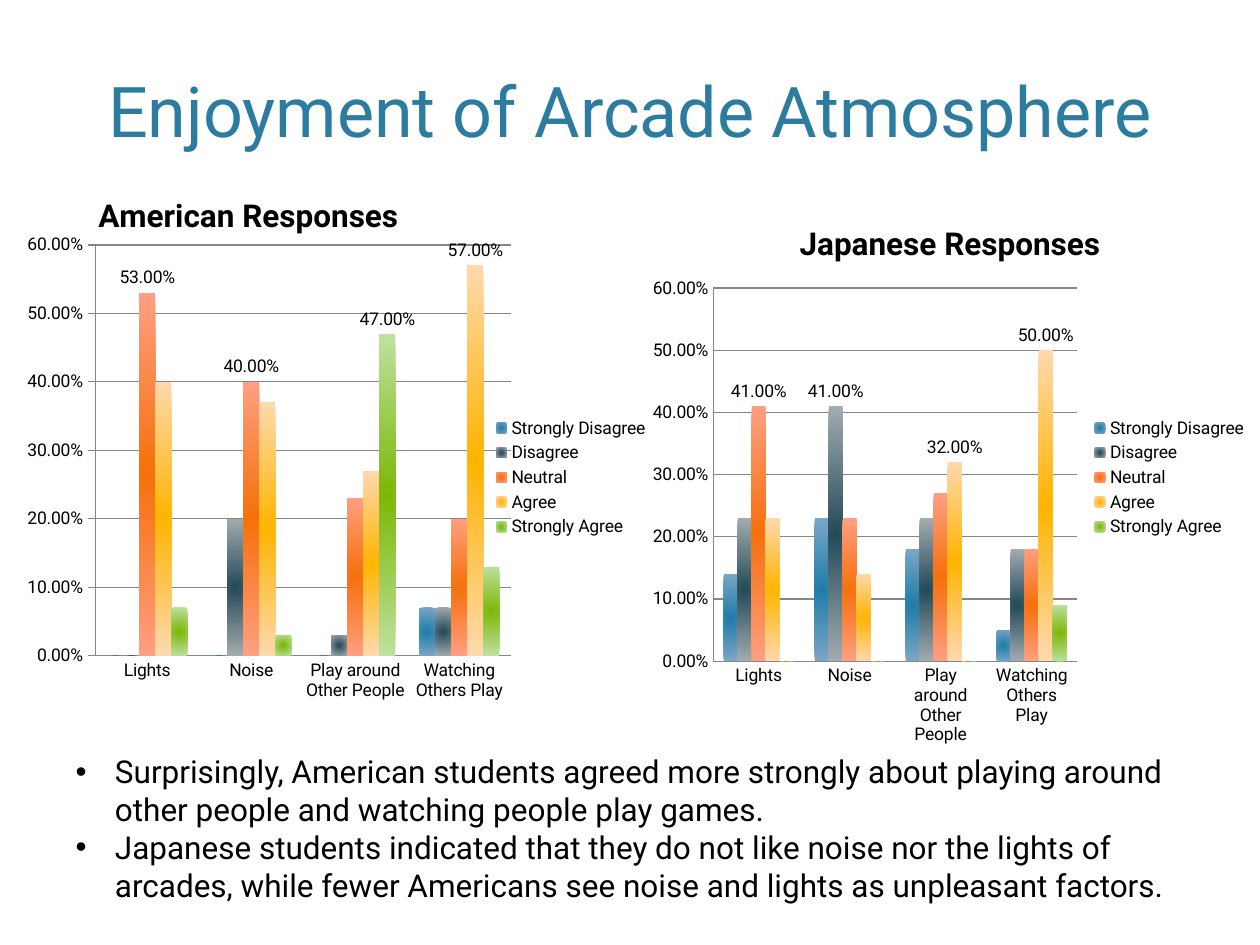
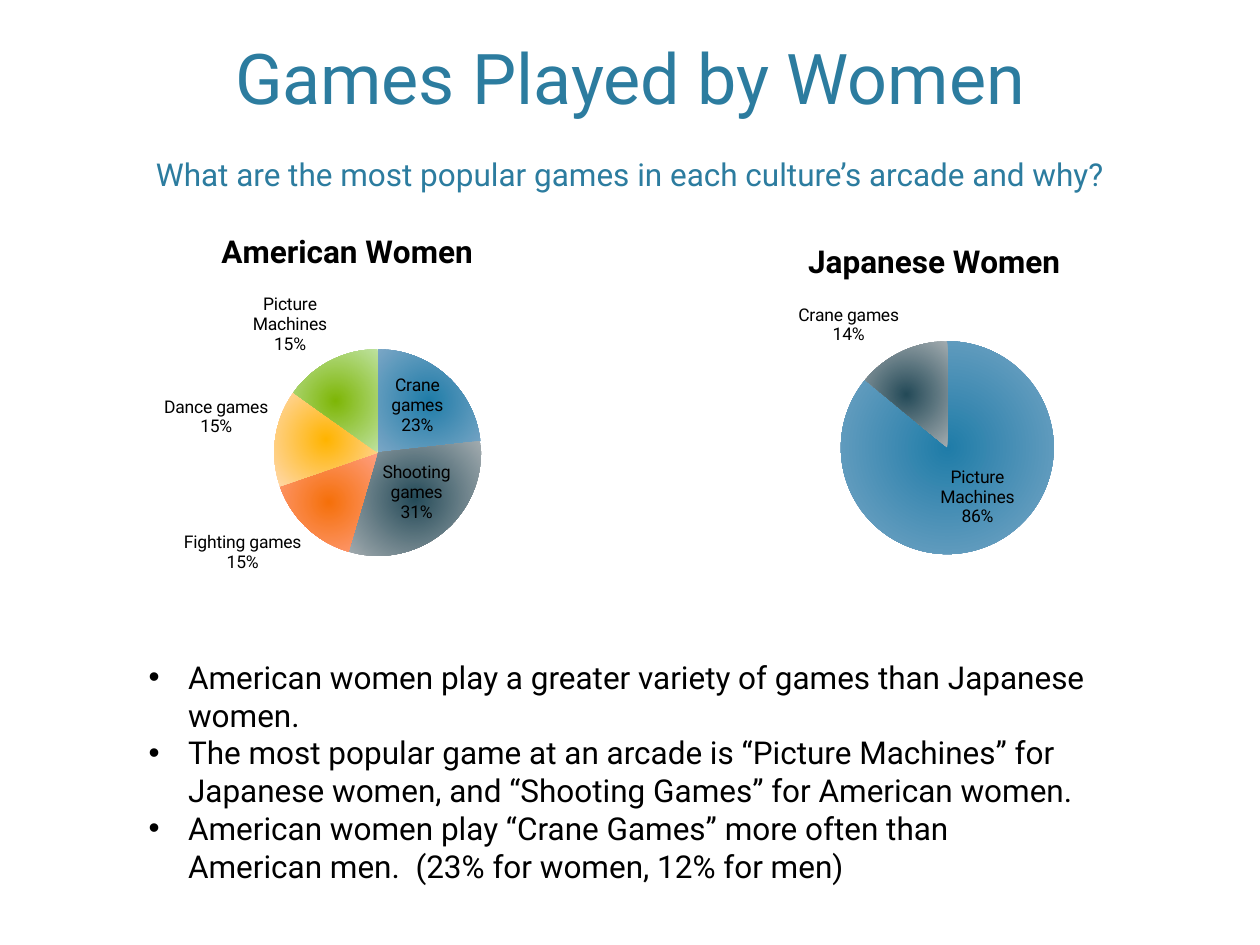
from lxml import etree
from pptx import Presentation
from pptx.chart.data import CategoryChartData
from pptx.dml.color import RGBColor
from pptx.enum import chart as kinds, text
from pptx.oxml import ns
from pptx.util import Pt

FONT = "Roboto"
HUES = {"title": "2C7C9F", "ink": "000000", "grid": "868686"}
TONES = {
    "blue": ("1F7CA8", "7BA7C6"),
    "slate": ("244A58", "A3ACB0"),
    "orange": ("F5700A", "FF9F82"),
    "gold": ("FFB400", "FFD9AE"),
    "green": ("7EB606", "BEE2A0"),
}
SCALE = ["Strongly Disagree", "Disagree", "Neutral", "Agree", "Strongly Agree"]
TOPICS = ["Lights", "Noise", "Play around Other People", "Watching Others Play"]

PAGES = [
    {
        "title": ["Enjoyment of Arcade Atmosphere"],
        "head": (43.2, 8.64, 633.6, 81.36),
        "body": (36, 426.24, 648, 113),
        "list": [
            "Surprisingly, American students agreed more strongly about playing around other people and watching people play games.",
            "Japanese students indicated that they do not like noise nor the lights of arcades, while fewer Americans see noise and lights as unpleasant factors.",
        ],
        "charts": [
            {
                "name": "American Responses", "box": (0, 108, 378, 329.76),
                "plot": (0.144, 0.097, 0.629, 0.712), "spot": (0.14, 0),
                "tick": "OUTSIDE", "cats": TOPICS,
                "rows": [(0, 0, 0, 0.07), (0, 0.2, 0.03, 0.07), (0.53, 0.4, 0.23, 0.2),
                         (0.4, 0.37, 0.27, 0.57), (0.07, 0.03, 0.47, 0.13)],
                "marks": [(2, 0), (2, 1), (3, 3), (4, 2)],
            },
            {
                "name": "Japanese Responses", "box": (365.76, 113.76, 354.24, 318.24),
                "plot": (0.118, 0.16, 0.587, 0.67), "tick": "NONE", "cats": TOPICS,
                "rows": [(0.14, 0.23, 0.18, 0.05), (0.23, 0.41, 0.23, 0.18),
                         (0.41, 0.23, 0.27, 0.18), (0.23, 0.14, 0.32, 0.5), (0, 0, 0, 0.09)],
                "marks": [(1, 1), (2, 0), (3, 2), (3, 3)],
            },
        ],
    },
    {
        "title": ["Games Played by Women",
                  "What are the most popular games in each culture’s arcade and why?"],
        "head": (43.2, 8.64, 633.6, 105.12),
        "body": (77.76, 372.24, 552.24, 165),
        "list": [
            "American women play a greater variety of games than Japanese women.",
            "The most popular game at an arcade is “Picture Machines” for Japanese women, and “Shooting Games” for American women.",
            "American women play “Crane Games” more often than American men.  (23% for women, 12% for men)",
        ],
        "charts": [
            {
                "name": "Japanese Women", "box": (360, 126, 347.76, 234),
                "plot": (0.346, 0.295, 0.351, 0.52),
                "cats": ["Picture Machines", "Crane games"], "shares": (86, 14),
            },
            {
                "name": "American Women", "box": (30.24, 120.24, 336.24, 234),
                "plot": (0.376, 0.339, 0.352, 0.505),
                "cats": ["Crane games", "Shooting games", "Fighting games",
                         "Dance games", "Picture Machines"],
                "shares": (23, 31, 15, 15, 15),
            },
        ],
    },
]


def place(node, slot, spots):
    for old in node.findall(ns.qn("c:layout")):
        node.remove(old)
    lay = etree.Element(ns.qn("c:layout"))
    man = etree.SubElement(lay, ns.qn("c:manualLayout"))
    if len(spots) == 4:
        etree.SubElement(man, ns.qn("c:layoutTarget"), val="inner")
    for key in ("xMode", "yMode"):
        etree.SubElement(man, ns.qn("c:" + key), val="edge")
    for key, val in zip("xywh", spots):
        etree.SubElement(man, ns.qn("c:" + key), val=str(val))
    node.insert(slot, lay)


def glow(part, tone):
    fill = part.format.fill
    fill.gradient()
    for stop, hue in zip(fill.gradient_stops, TONES[tone]):
        stop.color.rgb = RGBColor.from_string(hue)
    for line in part.format._element.xpath(".//c:spPr/a:gradFill/a:lin"):
        ring = etree.Element(ns.qn("a:path"), {"path": "circle"})
        etree.SubElement(ring, ns.qn("a:fillToRect"), l="50000", t="50000", r="50000", b="50000")
        line.getparent().replace(line, ring)


deck = Presentation()
deck.slide_width, deck.slide_height = Pt(720), Pt(540)

for page in PAGES:
    slide = deck.slides.add_slide(deck.slide_layouts[1])
    head, body = slide.shapes.title, slide.placeholders[1]
    for shape, box, lines in ((head, page["head"], page["title"]), (body, page["body"], page["list"])):
        shape.left, shape.top, shape.width, shape.height = map(Pt, box)
        frame = shape.text_frame
        frame.text = "\n".join(lines)
        frame.word_wrap = True
        frame.auto_size = text.MSO_AUTO_SIZE.NONE
        top = shape is head
        frame.vertical_anchor = text.MSO_ANCHOR.BOTTOM if top else text.MSO_ANCHOR.TOP
        for rank, para in enumerate(frame.paragraphs):
            para.font.name = FONT
            para.font.size = Pt(40 if top and rank == 0 else 18)
            para.font.color.rgb = RGBColor.from_string(HUES["title" if top else "ink"])
            para.space_before = Pt(21 if top and rank else 0)
            if top:
                para.alignment = text.PP_ALIGN.CENTER
            else:
                props = para._p.get_or_add_pPr()
                props.set("marL", str(Pt(22.5)))
                props.set("indent", str(Pt(-22.5)))
                etree.SubElement(props, ns.qn("a:buChar"), char="•")
                props.append(props.find(ns.qn("a:defRPr")))

    for item in page["charts"]:
        bars = "rows" in item
        data = CategoryChartData(number_format="0.00%" if bars else "General")
        data.categories = item["cats"]
        if bars:
            for name, row in zip(SCALE, item["rows"]):
                data.add_series(name, row)
        else:
            data.add_series("Series 1", item["shares"])
        kind = kinds.XL_CHART_TYPE.COLUMN_CLUSTERED if bars else kinds.XL_CHART_TYPE.PIE
        chart = slide.shapes.add_chart(kind, *map(Pt, item["box"]), data).chart
        chart.font.name, chart.font.size = FONT, Pt(10)
        chart.font.color.rgb = RGBColor.from_string(HUES["ink"])
        chart.has_title = True
        chart.chart_title.text_frame.text = item["name"]
        font = chart.chart_title.text_frame.paragraphs[0].font
        font.name, font.size, font.bold = FONT, Pt(18), True
        font.color.rgb = RGBColor.from_string(HUES["ink"])
        place(chart._chartSpace.xpath("c:chart/c:plotArea")[0], 0, item["plot"])
        if "spot" in item:
            place(chart.chart_title._element, 1, item["spot"])
        chart.has_legend = bars
        plot = chart.plots[0]
        plot.vary_by_categories = not bars

        if bars:
            chart.legend.position = kinds.XL_LEGEND_POSITION.RIGHT
            chart.legend.include_in_layout = False
            plot.gap_width, plot.overlap = 150, 0
            side, base = chart.value_axis, chart.category_axis
            side.minimum_scale, side.maximum_scale, side.major_unit = 0, 0.6, 0.1
            side.tick_labels.number_format = "0.00%"
            side.tick_labels.number_format_is_linked = False
            side.major_tick_mark = getattr(kinds.XL_TICK_MARK, item["tick"])
            base.major_tick_mark = kinds.XL_TICK_MARK.NONE
            for line in (side.format.line, base.format.line, side.major_gridlines.format.line):
                line.color.rgb = RGBColor.from_string(HUES["grid"])
                line.width = Pt(0.75)
            for row, tone in zip(plot.series, TONES):
                row.invert_if_negative = False
                glow(row, tone)
            for row, spot in item["marks"]:
                bar = plot.series[row]
                bar.data_labels.show_value = False
                bar.points[spot].data_label.position = kinds.XL_LABEL_POSITION.OUTSIDE_END
        else:
            pie = plot.series[0]
            for spot, tone in zip(range(len(item["cats"])), TONES):
                glow(pie.points[spot], tone)
            tags = pie.data_labels
            tags.show_value = False
            tags.show_category_name = tags.show_percentage = True
            tags.position = kinds.XL_LABEL_POSITION.BEST_FIT
            gap = etree.Element(ns.qn("c:separator"))
            gap.text = "\n"
            tags._element.find(ns.qn("c:showBubbleSize")).addnext(gap)

deck.save("out.pptx")
